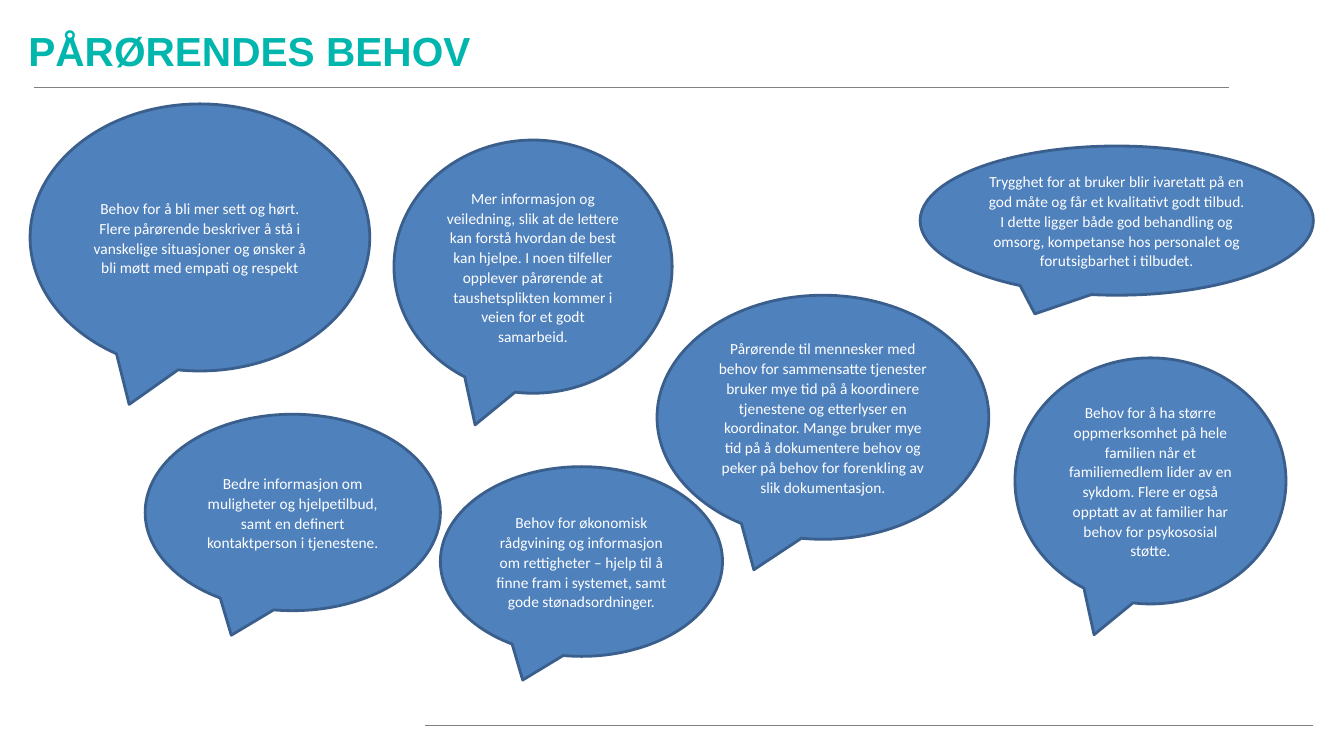
from lxml.etree import SubElement
from pptx import Presentation
from pptx.dml.color import RGBColor
from pptx.enum.shapes import MSO_CONNECTOR, MSO_SHAPE
from pptx.enum.text import MSO_ANCHOR, PP_ALIGN
from pptx.oxml.ns import qn
from pptx.util import Cm, Pt


def color(hex_code):
    return RGBColor.from_string(hex_code)


prs = Presentation()
prs.slide_width, prs.slide_height = Cm(33.87), Cm(19.05)
slide = prs.slides.add_slide(prs.slide_layouts[5])

# Rules under the heading and at the foot
for x1, x2, y, weight in [(0.86, 30.96, 2.21, 0.5), (33.1, 10.72, 18.29, 0.75)]:
    rule = slide.shapes.add_connector(
        MSO_CONNECTOR.STRAIGHT, Cm(x1), Cm(y), Cm(x2), Cm(y))
    rule.line.color.rgb = color("808080")
    rule.line.width = Pt(weight)
    SubElement(rule._element.spPr, qn("a:effectLst"))

# Heading
heading = slide.shapes.title
heading.left, heading.top = Cm(0.46), Cm(0.56)
heading.width, heading.height = Cm(28.55), Cm(1.42)
heading.text_frame.vertical_anchor = MSO_ANCHOR.MIDDLE
heading_line = heading.text_frame.paragraphs[0]
heading_line.alignment = PP_ALIGN.LEFT
heading_run = heading_line.add_run()
heading_run.text = "PÅRØRENDES BEHOV"
heading_run.font.name = "Arial"
heading_run.font.size = Pt(29)
heading_run.font.bold = True
heading_run.font.color.rgb = color("01B6AD")

# Needs in speech bubbles: left, top, width, height, text
needs = [
    (23.19, 3.68, 9.91, 3.76,
     "Trygghet for at bruker blir ivaretatt på en god måte og får et kvalitativt "
     "godt tilbud. I dette ligger både god behandling og omsorg, kompetanse hos "
     "personalet og forutsigbarhet i tilbudet."),
    (0.76, 2.62, 8.56, 6.73,
     "Behov for å bli mer sett og hørt. Flere pårørende beskriver å stå i "
     "vanskelige situasjoner og ønsker å bli møtt med empati og respekt"),
    (9.93, 3.53, 7.01, 6.38,
     "Mer informasjon og veiledning, slik at de lettere kan forstå hvordan de "
     "best kan hjelpe. I noen tilfeller opplever pårørende at taushetsplikten "
     "kommer i veien for et godt samarbeid."),
    (25.58, 9.02, 6.83, 6.2,
     "Behov for å ha større oppmerksomhet på hele familien når et familiemedlem "
     "lider av en sykdom. Flere er også opptatt av at familier har behov for "
     "psykososial støtte."),
    (3.66, 10.44, 7.44, 4.95,
     "Bedre informasjon om muligheter og hjelpetilbud, samt en definert "
     "kontaktperson i tjenestene."),
    (16.56, 7.44, 8.36, 6.15,
     "Pårørende til mennesker med behov for sammensatte tjenester bruker mye tid "
     "på å koordinere tjenestene og etterlyser en koordinator. Mange bruker mye "
     "tid på å dokumentere behov og peker på behov for forenkling av slik "
     "dokumentasjon."),
    (11.1, 11.76, 7.11, 4.78,
     "Behov for økonomisk rådgvining og informasjon om rettigheter – hjelp til å "
     "finne fram i systemet, samt gode stønadsordninger."),
]
for left, top, width, height, need in needs:
    bubble = slide.shapes.add_shape(
        MSO_SHAPE.OVAL_CALLOUT, Cm(left), Cm(top), Cm(width), Cm(height))
    bubble.shadow.inherit = False
    bubble.fill.solid()
    bubble.fill.fore_color.rgb = color("4F81BD")
    bubble.line.color.rgb = color("3A5F8C")
    bubble.line.width = Pt(2)
    bubble.text_frame.word_wrap = True
    bubble.text_frame.vertical_anchor = MSO_ANCHOR.MIDDLE
    statement = bubble.text_frame.paragraphs[0]
    statement.alignment = PP_ALIGN.CENTER
    statement.line_spacing = 1.07
    statement.space_after = Pt(8)
    need_run = statement.add_run()
    need_run.text = need
    need_run.font.name = "Calibri"
    need_run.font.size = Pt(11)
    need_run.font.color.rgb = color("FFFFFF")

prs.save("out.pptx")
